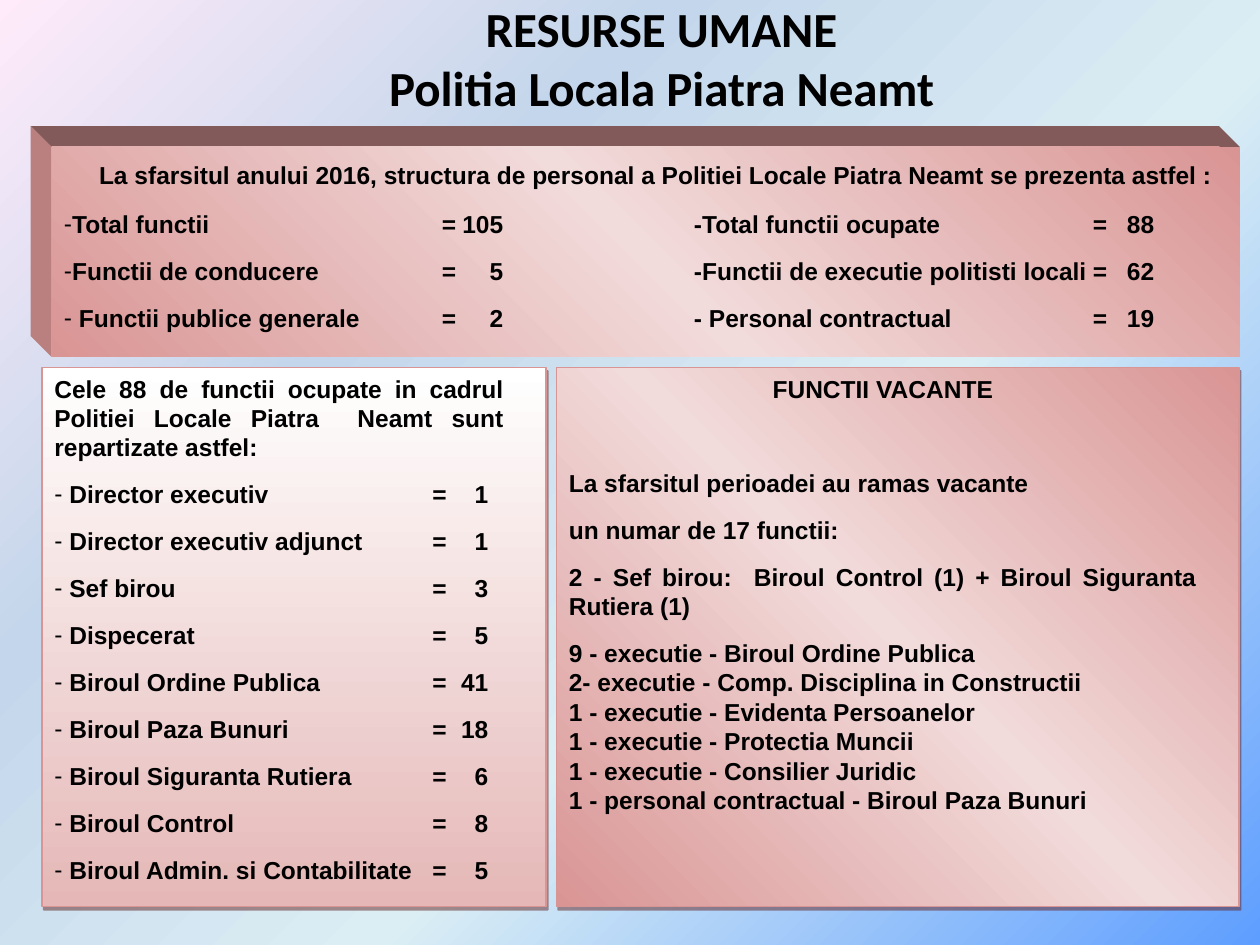
from dataclasses import dataclass

from lxml import etree
from pptx import Presentation
from pptx.dml.color import RGBColor
from pptx.enum.shapes import MSO_SHAPE
from pptx.enum.text import MSO_ANCHOR, PP_ALIGN
from pptx.oxml.ns import qn
from pptx.util import Pt

RECT = MSO_SHAPE.RECTANGLE
TOP, MIDDLE = MSO_ANCHOR.TOP, MSO_ANCHOR.MIDDLE
LEFT, CENTER, JUSTIFY = PP_ALIGN.LEFT, PP_ALIGN.CENTER, PP_ALIGN.JUSTIFY


@dataclass(frozen=True)
class Theme:
    title_font: str = "Calibri"
    body_font: str = "Arial"
    title_size: float = 28
    body_size: float = 14
    gap: float = 10
    text: str = "000000"
    line: str = "D99594"
    shadow: str = "622423"
    bevel_top: str = "835A5A"
    bevel_side: str = "BA8080"
    backdrop: tuple = ((0, "FFEBFA"), (30, "C4D6EB"), (60, "DBEEF4"), (100, "5E9EFF"))
    sheen: tuple = ((0, "D99594"), (50, "F2DBDB"), (100, "D99594"))
    fade: tuple = ((0, "FFFFFF"), (100, "E5B8B7"))


THEME = Theme()

# Each row is a dash-bulleted line; a leading space sets the label off from its dash.
STAFF = [
    ("Total functii", 105, "-Total functii ocupate", 88),
    ("Functii de conducere", 5, "-Functii de executie politisti locali", 62),
    (" Functii publice generale", 2, "- Personal contractual", 19),
]
POSTS = [
    ("Director executiv", 1), ("Director executiv adjunct", 1), ("Sef birou", 3),
    ("Dispecerat", 5), ("Biroul Ordine Publica", 41), ("Biroul Paza Bunuri", 18),
    ("Biroul Siguranta Rutiera", 6), ("Biroul Control", 8),
    ("Biroul Admin. si Contabilitate", 5),
]
VACANCY_INTRO = [
    "La sfarsitul perioadei au ramas vacante",
    "un numar de 17 functii:",
    "2 - Sef birou:  Biroul Control (1) + Biroul Siguranta Rutiera (1)",
]
VACANCIES = [
    "9 - executie - Biroul Ordine Publica",
    "2- executie - Comp. Disciplina in Constructii",
    "1 - executie - Evidenta Persoanelor",
    "1 - executie - Protectia Muncii",
    "1 - executie - Consilier Juridic",
    "1 - personal contractual - Biroul Paza Bunuri",
]
STAFF_TABS = [(216, "l"), (251, "r"), (360, "l"), (588, "l"), (623, "r")]
POST_TABS = [(216, "l"), (248, "r")]


def set_format(obj, **values):
    for name, value in values.items():
        setattr(obj, name, value)


def add_xml(parent, tag, **attrs):
    return etree.SubElement(parent, qn(tag), {k: str(v) for k, v in attrs.items()})


def set_gradient(fill, stops, angle):
    """Fill with any number of stops; the angle is clockwise in degrees."""
    fill.gradient()
    fill.gradient_angle = -angle % 360
    gs_lst = fill.gradient_stops[0]._gs.getparent()
    for gs in list(gs_lst):
        gs_lst.remove(gs)
    for pos, color in stops:
        gs = add_xml(gs_lst, "a:gs", pos=pos * 1000)
        add_xml(gs, "a:srgbClr", val=color)


def add_drop_shadow(sp):
    effects = sp._element.spPr.find(qn("a:effectLst"))
    shadow = add_xml(effects, "a:outerShdw", blurRad=0, dist=Pt(2.2),
                     dir=63 * 60000, algn="ctr", rotWithShape=0)
    color = add_xml(shadow, "a:srgbClr", val=THEME.shadow)
    add_xml(color, "a:alpha", val=50000)


def add_panel(slide, box, stops, angle, raised=True, right_inset=24, top_inset=3.6):
    sp = slide.shapes.add_shape(RECT, *map(Pt, box))
    sp.shadow.inherit = False
    set_gradient(sp.fill, stops, angle)
    if raised:
        sp.line.color.rgb = RGBColor.from_string(THEME.line)
        sp.line.width = Pt(1)
        add_drop_shadow(sp)
    else:
        sp.line.fill.background()
    set_format(sp.text_frame, word_wrap=True, vertical_anchor=TOP,
               margin_left=Pt(7.2), margin_right=Pt(right_inset),
               margin_top=Pt(top_inset), margin_bottom=Pt(3.6))
    return sp.text_frame


def add_face(slide, points, color):
    """Draw one flat side of the extruded panel."""
    points = [(Pt(x), Pt(y)) for x, y in points]
    builder = slide.shapes.build_freeform(*points[0])
    builder.add_line_segments(points[1:], close=True)
    sp = builder.convert_to_shape()
    sp.shadow.inherit = False
    sp.fill.solid()
    sp.fill.fore_color.rgb = RGBColor.from_string(color)
    sp.line.fill.background()


def add_bevel(slide, box, depth):
    x, y, w, h = box
    corner = (x - depth, y - depth)
    add_face(slide, [corner, (x + w - depth, y - depth), (x + w, y), (x, y)],
             THEME.bevel_top)
    add_face(slide, [corner, (x, y), (x, y + h), (x - depth, y + h - depth)],
             THEME.bevel_side)


def set_font(font, name, size):
    set_format(font, name=name, size=Pt(size), bold=True)
    font.color.rgb = RGBColor.from_string(THEME.text)


def add_line(tf, text, align=LEFT, after=THEME.gap, indent=0):
    p = tf.paragraphs[0] if not tf.text else tf.add_paragraph()
    set_format(p, alignment=align, space_before=Pt(0), space_after=Pt(after))
    pPr = p._p.get_or_add_pPr()
    pPr.set("marL", "0")
    pPr.set("indent", str(Pt(indent)))
    r = p.add_run()
    r.text = text
    set_font(r.font, THEME.body_font, THEME.body_size)
    return pPr


def add_tabbed_line(tf, cells, tabs):
    """Add a dash-bulleted row whose cells sit on tab stops."""
    pPr = add_line(tf, "\t".join(map(str, cells)))
    add_xml(pPr, "a:buFont", typeface=THEME.body_font)
    add_xml(pPr, "a:buChar", char="-")
    tab_lst = add_xml(pPr, "a:tabLst")
    for pos, side in tabs:
        add_xml(tab_lst, "a:tab", pos=Pt(pos), algn=side)


def add_title(slide, text, box):
    sp = slide.shapes.title
    set_format(sp, **dict(zip(("left", "top", "width", "height"), map(Pt, box))))
    tf = sp.text_frame
    set_format(tf, word_wrap=True, vertical_anchor=MIDDLE, margin_top=0, margin_bottom=0)
    tf.text = text
    p = tf.paragraphs[0]
    p.alignment = CENTER
    for r in p.runs:
        set_font(r.font, THEME.title_font, THEME.title_size)


def add_staff_panel(slide):
    box = (29.5, 84, 679, 120)
    add_bevel(slide, box, 12)
    tf = add_panel(slide, box, THEME.sheen, 315, raised=False, right_inset=7.2, top_inset=7.6)
    add_line(tf, "La sfarsitul anului 2016, structura de personal a Politiei Locale "
                 "Piatra Neamt se prezenta astfel :", after=11, indent=20)
    for label, value, label2, value2 in STAFF:
        add_tabbed_line(tf, (label, "=", value, label2, "=", value2), STAFF_TABS)


def add_posts_panel(slide):
    tf = add_panel(slide, (24, 210, 288, 308), THEME.fade, 90)
    add_line(tf, "Cele 88 de functii ocupate in cadrul Politiei Locale Piatra  Neamt "
                 "sunt repartizate astfel:", JUSTIFY)
    for post, count in POSTS:
        add_tabbed_line(tf, (f" {post}", "=", count), POST_TABS)


def add_vacancies_panel(slide):
    tf = add_panel(slide, (318, 210, 390, 308), THEME.sheen, 315)
    add_line(tf, "FUNCTII VACANTE", CENTER, after=37)
    for text in VACANCY_INTRO:
        add_line(tf, text, JUSTIFY)
    for text in VACANCIES:
        add_line(tf, text, JUSTIFY, after=0)


def main():
    prs = Presentation()
    set_format(prs, slide_width=Pt(720), slide_height=Pt(540))
    slide = prs.slides.add_slide(prs.slide_layouts[5])
    set_gradient(slide.background.fill, THEME.backdrop, 45)
    add_title(slide, "RESURSE UMANE\vPolitia Locala Piatra Neamt", (54, 0, 648, 66))
    add_staff_panel(slide)
    add_posts_panel(slide)
    add_vacancies_panel(slide)
    prs.save("out.pptx")


if __name__ == "__main__":
    main()
